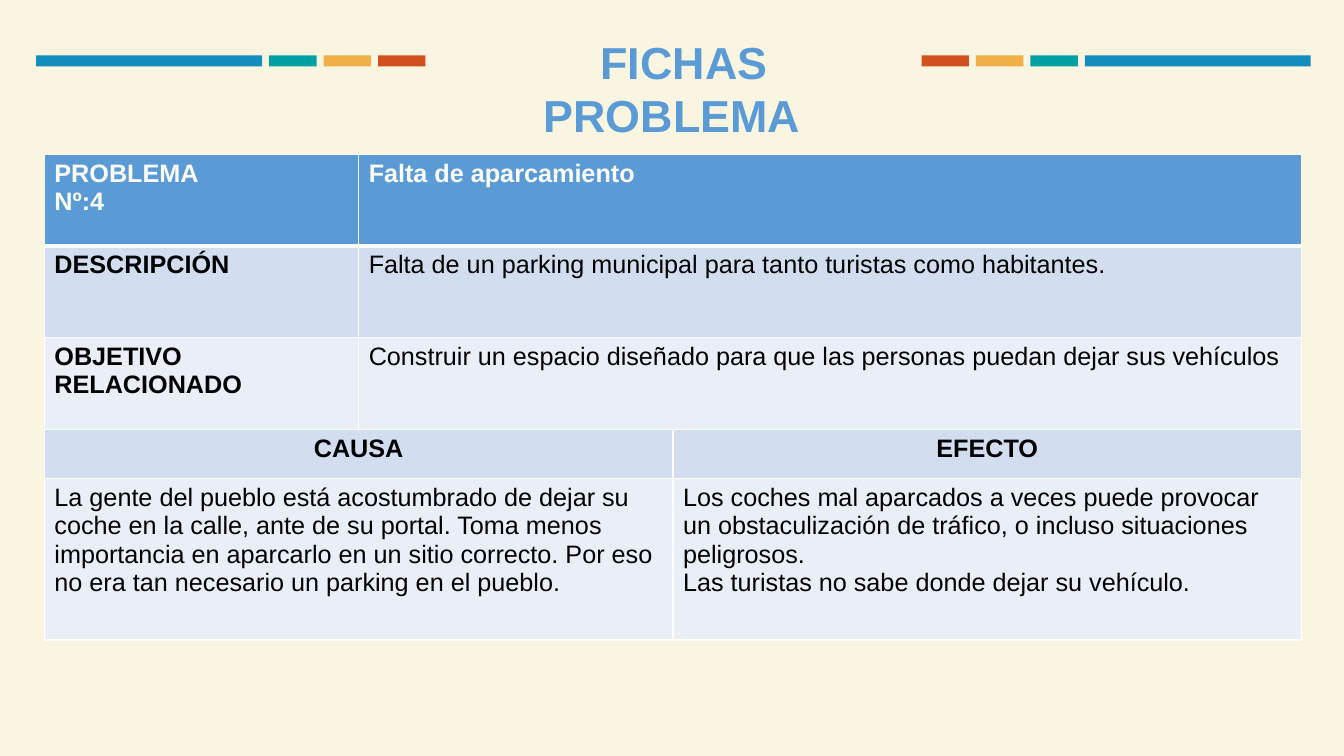
from dataclasses import dataclass

from lxml import etree
from pptx import Presentation
from pptx import util as u
from pptx.dml.color import RGBColor
from pptx.enum import shapes, text
from pptx.oxml.ns import qn

WIDTH, HEIGHT = 13.33, 7.5


@dataclass(frozen=True)
class Theme:
    font: str = "Arial"
    background: str = "FAF5E1"
    accent: str = "5B9BD5"
    band_dark: str = "D2DEEF"
    band_light: str = "EAEFF7"
    white: str = "FFFFFF"
    ink: str = "000000"
    ribbon: tuple = ("148CBE", "00A0A0", "F0AF47", "D2501E")
    title_size: int = 32
    cell_size: int = 18


THEME = Theme()

# Table grid: shares of the table's width, and row heights in inches
TABLE_LEFT, TABLE_TOP, TABLE_WIDTH = 0.44, 1.53, 12.47
COLUMN_SHARES = (0.25, 0.25, 0.5)
ROW_HEIGHTS = (0.91, 0.91, 0.91, 0.49, 1.6)

# Each row: column where the second cell starts, then the two texts
ROWS = (
    (1, "PROBLEMA\nNº:4", "Falta de aparcamiento"),
    (1, "DESCRIPCIÓN",
     "Falta de un parking municipal para tanto turistas como habitantes."),
    (1, "OBJETIVO RELACIONADO",
     "Construir un espacio diseñado para que las personas puedan dejar sus vehículos"),
    (2, "CAUSA", "EFECTO"),
    (2, "La gente del pueblo está acostumbrado de dejar su coche en la calle, "
        "ante de su portal. Toma menos importancia en aparcarlo en un sitio "
        "correcto. Por eso no era tan necesario un parking en el pueblo.",
     "Los coches mal aparcados a veces puede provocar un obstaculización de "
     "tráfico, o incluso situaciones peligrosos.\n"
     "Las turistas no sabe donde dejar su vehículo."),
)
HEADER_ROW, HEADING_ROW = 0, 3


def color(code):
    return RGBColor.from_string(code)


def format_runs(frame, size, code, bold, align):
    for para in frame.paragraphs:
        para.alignment = align
        for span in para.runs:
            span.font.name = THEME.font
            span.font.size = u.Pt(size)
            span.font.bold = bold
            span.font.color.rgb = color(code)


def add_bar(page, left, width, code):
    bar = page.shapes.add_shape(shapes.MSO_SHAPE.RECTANGLE, u.Inches(left),
                                u.Inches(0.55), u.Inches(width), u.Inches(0.11))
    bar.shadow.inherit = False
    bar.fill.solid()
    bar.fill.fore_color.rgb = color(code)
    bar.line.fill.background()


def add_ribbons(page):
    """One long and three short bars on the left, mirrored on the right."""
    left, right, gap = 0.36, 13.0, 0.07
    for code, width in zip(THEME.ribbon, (2.24, 0.47, 0.47, 0.47)):
        add_bar(page, left, width, code)
        add_bar(page, right - width, width, code)
        left += width + gap
        right -= width + gap


def set_title(page, words):
    title = page.shapes.title
    title.left, title.top = u.Inches(4.28), u.Inches(0.29)
    title.width, title.height = u.Inches(4.77), u.Inches(0.64)
    frame = title.text_frame
    frame.text = words
    frame.word_wrap = True
    frame.auto_size = text.MSO_AUTO_SIZE.SHAPE_TO_FIT_TEXT
    frame.vertical_anchor = text.MSO_ANCHOR.TOP
    frame.margin_left = frame.margin_right = u.Inches(0.25)
    format_runs(frame, THEME.title_size, THEME.accent, True, text.PP_ALIGN.CENTER)
    # The first line is nudged right by an indent
    properties = frame.paragraphs[0]._p.get_or_add_pPr()
    properties.set("marL", "0")
    properties.set("indent", str(u.Inches(0.24)))


def set_borders(cell, row):
    """White rules; the one under the header is heavier."""
    widths = {"L": 1, "R": 1, "T": 3 if row == HEADER_ROW + 1 else 1,
              "B": 3 if row == HEADER_ROW else 1}
    properties = cell._tc.get_or_add_tcPr()
    for place, (side, points) in enumerate(widths.items()):
        line = etree.Element(qn(f"a:ln{side}"), w=str(u.Pt(points)))
        fill = etree.SubElement(line, qn("a:solidFill"))
        etree.SubElement(fill, qn("a:srgbClr"), val=THEME.white)
        properties.insert(place, line)


def fill_cell(cell, words, row, bold):
    cell.text_frame.text = words
    code = THEME.white if row == HEADER_ROW else THEME.ink
    align = text.PP_ALIGN.CENTER if row == HEADING_ROW else text.PP_ALIGN.LEFT
    format_runs(cell.text_frame, THEME.cell_size, code, bold, align)


def add_problem_table(page):
    grid = page.shapes.add_table(
        len(ROWS), len(COLUMN_SHARES), u.Inches(TABLE_LEFT), u.Inches(TABLE_TOP),
        u.Inches(TABLE_WIDTH), u.Inches(sum(ROW_HEIGHTS))).table
    for column, share in zip(grid.columns, COLUMN_SHARES):
        column.width = u.Inches(TABLE_WIDTH * share)
    fills = (THEME.accent, THEME.band_dark, THEME.band_light,
             THEME.band_dark, THEME.band_light)
    for row, (split, first, second) in enumerate(ROWS):
        grid.rows[row].height = u.Inches(ROW_HEIGHTS[row])
        for cell in grid.rows[row].cells:
            cell.fill.solid()
            cell.fill.fore_color.rgb = color(fills[row])
            set_borders(cell, row)
        # Join the middle column to its left or right neighbour
        grid.cell(row, split - 1 if split == 2 else 1).vertical_anchor = text.MSO_ANCHOR.TOP
        start = 0 if split == 2 else 1
        grid.cell(row, start).merge(grid.cell(row, start + 1))
        is_heading = row in (HEADER_ROW, HEADING_ROW)
        fill_cell(grid.cell(row, 0), first, row, is_heading or split == 1)
        fill_cell(grid.cell(row, split), second, row, is_heading)


def main():
    deck = Presentation()
    deck.slide_width, deck.slide_height = u.Inches(WIDTH), u.Inches(HEIGHT)
    page = deck.slides.add_slide(deck.slide_layouts[5])
    page.background.fill.solid()
    page.background.fill.fore_color.rgb = color(THEME.background)
    add_ribbons(page)
    set_title(page, "FICHAS PROBLEMA")
    add_problem_table(page)
    deck.save("out.pptx")


if __name__ == "__main__":
    main()
